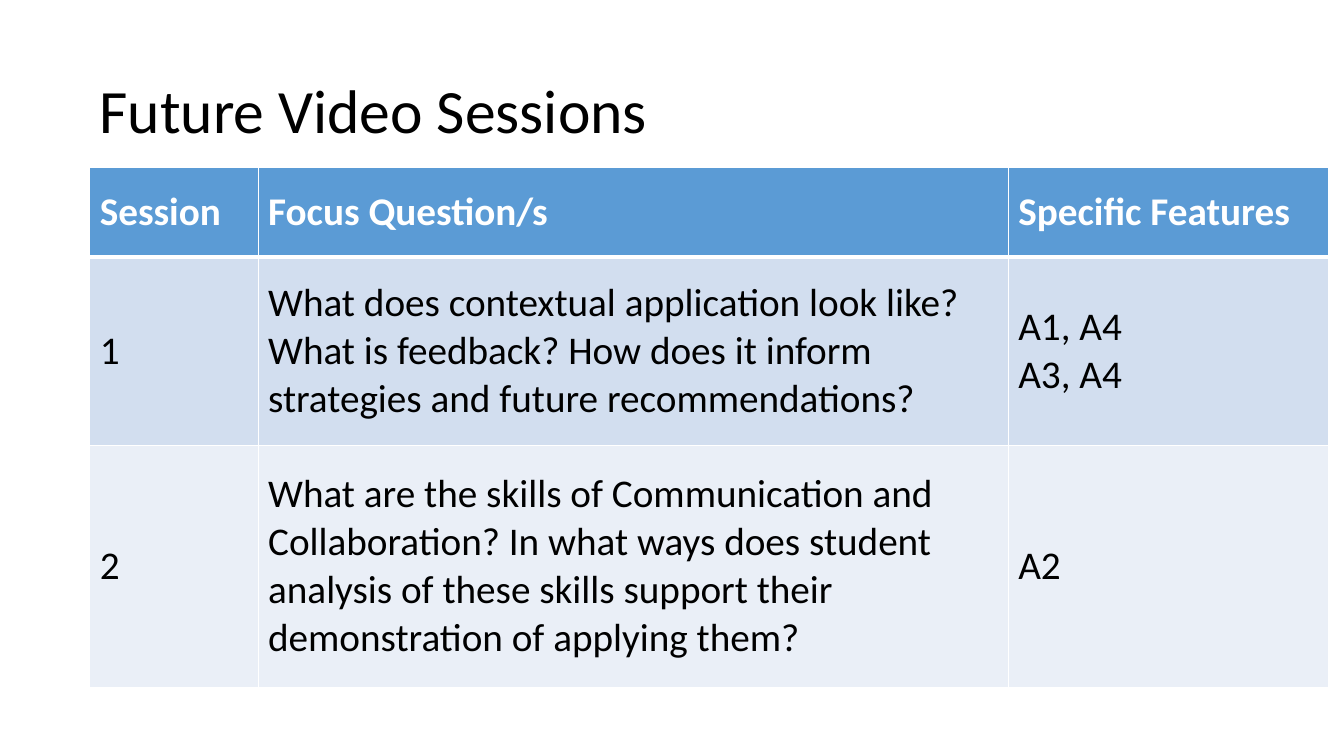
from dataclasses import dataclass

from lxml.etree import SubElement
from pptx import Presentation
from pptx.dml.color import RGBColor
from pptx.enum.text import MSO_ANCHOR
from pptx.oxml.ns import qn
from pptx.util import Inches, Pt


@dataclass(frozen=True)
class Theme:
    font: str = "Calibri"
    title: int = 44
    body: int = 28
    ink: str = "000000"
    paper: str = "FFFFFF"
    head: str = "5B9BD5"
    bands: tuple = ("D2DEEF", "EAEFF7")
    thin: int = 1
    thick: int = 3


THEME = Theme()
COLS = (1.67, 7.44, 3.18)
ROWS = (0.89, 1.87, 2.4)
SESSIONS = (
    ("Session", "Focus Question/s", "Specific Features"),
    ("1",
     "What does contextual application look like?\n"
     "What is feedback? How does it inform strategies and future recommendations?",
     "A1, A4\nA3, A4"),
    ("2",
     "What are the skills of Communication and Collaboration? In what ways does "
     "student analysis of these skills support their demonstration of applying them?",
     "A2"),
)


def write(frame, text, size, color, bold=False):
    frame.text = text
    for para in frame.paragraphs:
        font = para.font
        font.name, font.size, font.bold = THEME.font, Pt(size), bold
        font.color.rgb = RGBColor.from_string(color)


def rule(cell, side, width):
    """Draw one white cell border."""
    props = cell._tc.get_or_add_tcPr()
    line = SubElement(props, qn(f"a:ln{side}"), w=str(Pt(width)))
    fill = SubElement(line, qn("a:solidFill"))
    SubElement(fill, qn("a:srgbClr"), val=THEME.paper)


def add_title(slide, box, text):
    frame = slide.shapes.add_textbox(*map(Inches, box)).text_frame
    frame.word_wrap = True
    frame.vertical_anchor = MSO_ANCHOR.MIDDLE
    write(frame, text, THEME.title, THEME.ink)
    frame.paragraphs[0].line_spacing = 0.9


def add_grid(slide, box, data):
    grid = slide.shapes.add_table(len(ROWS), len(COLS), *map(Inches, box)).table
    for col, width in zip(grid.columns, COLS):
        col.width = Inches(width)
    for row, height in zip(grid.rows, ROWS):
        row.height = Inches(height)

    for r, texts in enumerate(data):
        head = r == 0
        back = THEME.head if head else THEME.bands[(r - 1) % 2]
        ink = THEME.paper if head else THEME.ink
        for c, text in enumerate(texts):
            cell = grid.cell(r, c)
            cell.vertical_anchor = MSO_ANCHOR.MIDDLE
            write(cell.text_frame, text, THEME.body, ink, head)
            # Heavy rule between the header and the first session
            for side in "LRTB":
                heavy = (r, side) in ((0, "B"), (1, "T"))
                rule(cell, side, THEME.thick if heavy else THEME.thin)
            cell.fill.solid()
            cell.fill.fore_color.rgb = RGBColor.from_string(back)


def main():
    deck = Presentation()
    deck.slide_width, deck.slide_height = Inches(13.33), Inches(7.5)
    slide = deck.slides.add_slide(deck.slide_layouts[6])
    # Table first, so the title lies over its top edge
    add_grid(slide, (0.89, 1.66, sum(COLS), sum(ROWS)), SESSIONS)
    add_title(slide, (0.89, 0.4, 11.52, 1.45), "Future Video Sessions")
    deck.save("out.pptx")


if __name__ == "__main__":
    main()
